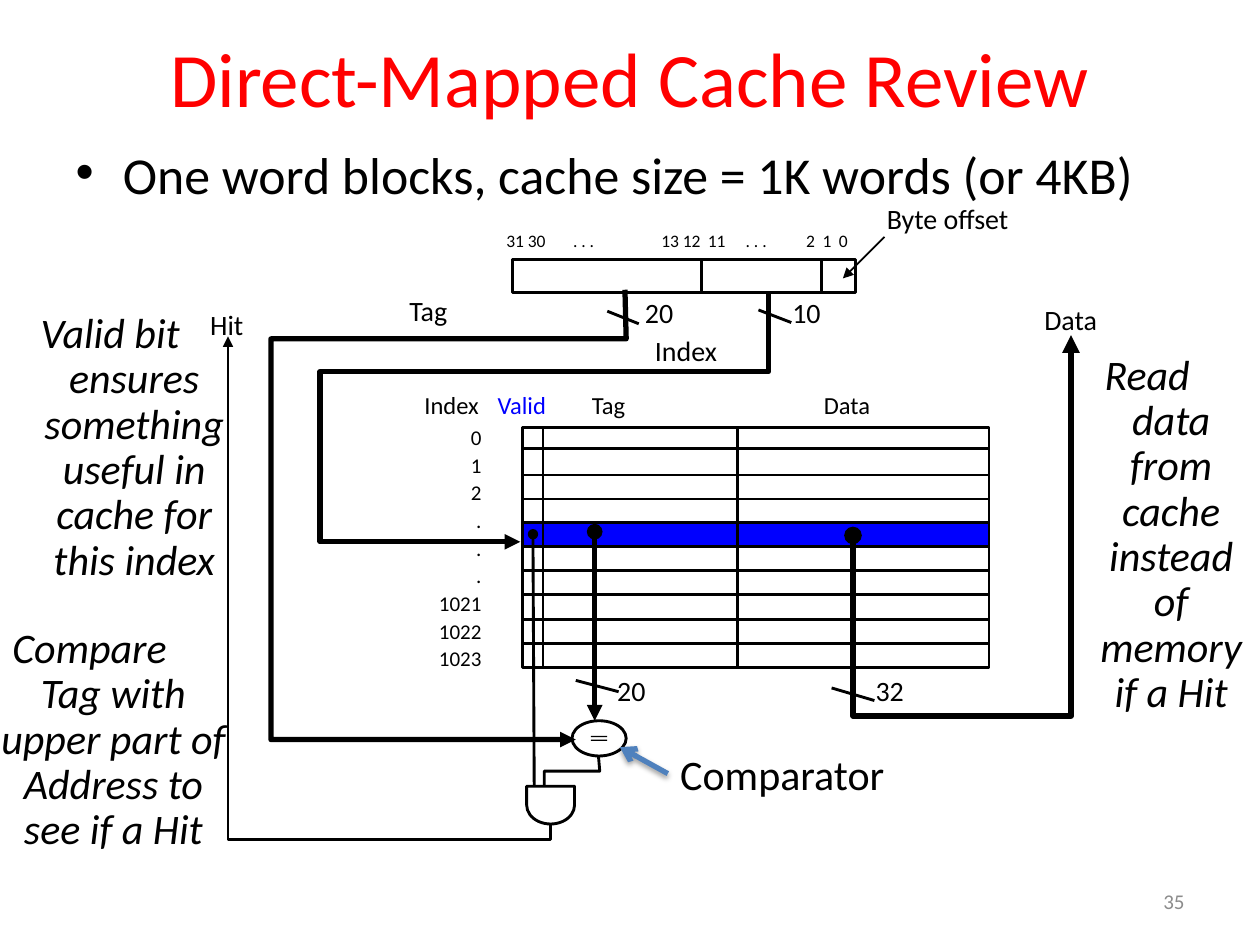
from lxml import etree
from pptx import Presentation
from pptx import util as u
from pptx.dml.color import RGBColor
from pptx.enum import shapes, text
from pptx.oxml.ns import qn

COLORS = {"ink": "000000", "title": "FF0000", "hit_row": "0000FF",
          "pointer": "4F81BD", "number": "8C8C8C"}
THIN, BUS = 1.63, 3

# Content; places are in inches and become Cm in size()
TITLE = "Direct-Mapped Cache Review"
SUMMARY = "One word blocks, cache size = 1K words (or 4KB)"
LABELS = [  # wording, left, top, width, height, points, colour
    ("20", 5.02, 2.3, 0.45, 0.37, 16, "ink"),
    ("Tag", 3.15, 2.28, 0.58, 0.37, 16, "ink"),
    ("10", 6.19, 2.3, 0.45, 0.37, 16, "ink"),
    ("Index", 5.1, 2.6, 0.74, 0.37, 16, "ink"),
    ("Index", 3.27, 3.05, 0.7, 0.33, 14, "ink"),
    ("Valid", 3.85, 3.05, 0.59, 0.33, 14, "hit_row"),
    ("Tag", 4.6, 3.05, 0.53, 0.33, 14, "ink"),
    ("Data", 6.44, 3.05, 0.61, 0.33, 14, "ink"),
    ("Byte offset", 6.94, 1.55, 1.25, 0.37, 16, "ink"),
    ("20", 4.8, 5.3, 0.45, 0.37, 16, "ink"),
    ("32", 6.85, 5.3, 0.45, 0.37, 16, "ink"),
    ("Data", 8.19, 2.35, 0.67, 0.37, 16, "ink"),
    ("Hit", 1.57, 2.39, 0.47, 0.37, 16, "ink"),
]
NOTES = [  # wording, left, top, width, height
    ("Valid bit ensures something useful in cache for this index",
     -0.21, 2.43, 2.17, 0.5),
    ("Compare\vTag with upper part of Address to see if a Hit",
     -0.5, 4.93, 2.42, 2.24),
    ("Read\vdata from cache instead of memory if a Hit",
     8.21, 2.76, 1.79, 0.5),
]
ROW_NAMES = ["0", "1", "2", ".", ".", ".", "1021", "1022", "1023"]
BIT_NAMES = ["31 30", ". . .", "13 12", "11", ". . .", "2", "1", "0"]
BIT_TABS = [0.53, 1.23, 1.6, 1.9, 2.38, 2.51, 2.64]

# Cache array and address register
CACHE_LEFT, CACHE_RIGHT, CACHE_TOP, CACHE_BOTTOM = 4.15, 7.85, 3.39, 5.3
ROW_LINES = [3.56, 3.77, 3.96, 4.34, 4.53, 4.72, 4.92, 5.11]
COLUMN_LINES = [4.31, 5.85]
HIT_TOP, HIT_HEIGHT = 4.15, 0.19
REGISTER_TOP, REGISTER_BOTTOM = 2.06, 2.32
FIELD_LINES = [5.57, 6.52]

BUS_SLASHES = [((4.82, 2.47), (5.07, 2.57)), ((6.02, 2.46), (6.28, 2.56)),
               ((4.57, 5.4), (4.91, 5.49)), ((6.6, 5.46), (6.94, 5.56))]
WIRES = [  # corners, width, head, tail
    ([(4.96, 2.3), (4.97, 2.69), (2.15, 2.69), (2.15, 5.87), (4.57, 5.87)],
     BUS, None, "triangle"),
    ([(6.1, 2.32), (6.1, 2.95), (2.54, 2.95), (2.54, 4.3), (4.13, 4.3)],
     BUS, None, "triangle"),
    ([(7.02, 1.88), (6.69, 2.21)], 1, None, "triangle"),
    ([(4.72, 4.22), (4.72, 5.72)], BUS, "oval", "triangle"),
    ([(6.77, 4.25), (6.77, 5.68), (8.5, 5.68), (8.5, 2.66)],
     3.38, "oval", "triangle"),
    ([(4.23, 4.24), (4.24, 6.24)], THIN, "oval", None),
    ([(4.75, 6), (4.76, 6.12), (4.32, 6.12), (4.32, 6.24)], THIN, None, None),
    ([(4.37, 6.54), (4.37, 6.66), (1.81, 6.66), (1.81, 2.67)],
     THIN, None, "triangle"),
]


def size(inches):
    return u.Cm(inches * 2.54)


def sizes(*inches):
    return [size(value) for value in inches]


def color(name):
    return RGBColor.from_string(COLORS[name])


def set_font(paragraph, points, name="ink", italic=None):
    font = paragraph.font
    font.name, font.size, font.italic = "Calibri", u.Pt(points), italic
    font.color.rgb = color(name)


def write(slide, words, place, points, name="ink", wrap=False, italic=None):
    box = slide.shapes.add_textbox(*sizes(*place))
    frame = box.text_frame
    frame.text = words
    frame.word_wrap = wrap
    if not wrap:
        frame.auto_size = text.MSO_AUTO_SIZE.SHAPE_TO_FIT_TEXT
    for paragraph in frame.paragraphs:
        set_font(paragraph, points, name, italic)
    return box


def outline(shape, width, head=None, tail=None, name="ink"):
    shape.line.color.rgb = color(name)
    shape.line.width = u.Pt(width)
    ln = shape.element.spPr.find(qn("a:ln"))
    for tag, kind in (("a:headEnd", head), ("a:tailEnd", tail)):
        if kind:
            etree.SubElement(ln, qn(tag), type=kind)


def draw(slide, preset, place, fill=None, width=THIN):
    shape = slide.shapes.add_shape(preset, *sizes(*place))
    shape.shadow.inherit = False
    if fill:
        shape.fill.solid()
        shape.fill.fore_color.rgb = color(fill)
    else:
        shape.fill.background()
    if width:
        outline(shape, width)
    else:
        shape.line.fill.background()
    return shape


def wire(slide, corners, width=THIN, head=None, tail=None, name="ink"):
    points = [sizes(*corner) for corner in corners]
    if len(points) == 2:
        path = slide.shapes.add_connector(
            shapes.MSO_CONNECTOR.STRAIGHT, *points[0], *points[1])
        outline(path, width, head, tail, name)
        etree.SubElement(path.element.spPr, qn("a:effectLst"))
    else:
        builder = slide.shapes.build_freeform(*points[0])
        builder.add_line_segments(points[1:], close=False)
        path = builder.convert_to_shape()
        path.shadow.inherit = False
        path.fill.background()
        outline(path, width, head, tail, name)
    return path


def add_headings(slide):
    title, body = slide.shapes.title, slide.placeholders[1]
    for holder, words, place, points, name in (
            (title, TITLE, (0.5, 0.17, 9, 0.87), 44, "title"),
            (body, SUMMARY, (0.5, 1.26, 8.83, 0.74), 29.6, "ink")):
        holder.left, holder.top, holder.width, holder.height = sizes(*place)
        holder.text_frame.text = words
        holder.text_frame.auto_size = text.MSO_AUTO_SIZE.NONE
        set_font(holder.text_frame.paragraphs[0], points, name)
    body.text_frame.paragraphs[0].line_spacing = 0.6


def add_cache(slide):
    rectangle = shapes.MSO_SHAPE.RECTANGLE
    width = CACHE_RIGHT - CACHE_LEFT
    draw(slide, rectangle, (CACHE_LEFT, CACHE_TOP, width, CACHE_BOTTOM - CACHE_TOP))
    draw(slide, rectangle, (CACHE_LEFT, HIT_TOP, width, HIT_HEIGHT), "hit_row")
    for y in ROW_LINES:
        wire(slide, [(CACHE_LEFT, y), (CACHE_RIGHT, y)])
    for x in COLUMN_LINES:
        wire(slide, [(x, CACHE_TOP), (x, CACHE_BOTTOM)])
    rows = write(slide, "\n".join(ROW_NAMES), (3.35, 3.3, 0.57, 2.09), 12)
    for paragraph in rows.text_frame.paragraphs:
        paragraph.alignment = text.PP_ALIGN.RIGHT
        paragraph.line_spacing = 1.1


def add_register(slide):
    draw(slide, shapes.MSO_SHAPE.RECTANGLE,
         (4.07, REGISTER_TOP, 2.72, REGISTER_BOTTOM - REGISTER_TOP))
    for x in FIELD_LINES:
        wire(slide, [(x, REGISTER_TOP), (x, REGISTER_BOTTOM)])
    bits = write(slide, "\t".join(BIT_NAMES), (3.92, 1.78, 3.1, 0.27), 10, wrap=True)
    properties = bits.text_frame.paragraphs[0].font._element.getparent()
    stops = etree.Element(qn("a:tabLst"))
    for stop in BIT_TABS:
        etree.SubElement(stops, qn("a:tab"), pos=str(size(stop)), algn="l")
    properties.insert(0, stops)


def add_logic(slide):
    # Comparator with its equals sign, then the AND gate
    draw(slide, shapes.MSO_SHAPE.OVAL, (4.54, 5.72, 0.43, 0.28))
    for y in (5.84, 5.87):
        draw(slide, shapes.MSO_SHAPE.RECTANGLE, (4.69, y, 0.13, 0.01), "ink", None)
    gate = draw(slide, shapes.MSO_SHAPE.FLOWCHART_DELAY, (4.22, 6.2, 0.3, 0.38))
    gate.rotation = 90

    name = write(slide, "Comparator", (5.3, 5.89, 1.84, 0.5), 24)
    pointer = wire(slide, [(5.3, 6.14), (4.92, 5.93)], 3, tail="arrow", name="pointer")
    pointer.begin_connect(name, 1)
    effects = pointer.element.spPr.find(qn("a:effectLst"))
    shadow = etree.SubElement(effects, qn("a:outerShdw"), blurRad=str(u.Pt(3.1)),
                              dist=str(u.Pt(1.6)), dir="5400000", rotWithShape="0")
    black = etree.SubElement(shadow, qn("a:srgbClr"), val=COLORS["ink"])
    etree.SubElement(black, qn("a:alpha"), val="38000")


def add_notes(slide):
    for words, *place in NOTES:
        note = write(slide, words, place, 24, wrap=True, italic=True)
        paragraph = note.text_frame.paragraphs[0]
        paragraph.alignment = text.PP_ALIGN.CENTER
        paragraph.line_spacing = 0.9
        properties = paragraph.font._element.getparent()
        properties.set("marL", str(size(0.38)))
        properties.set("indent", str(size(-0.38)))
    number = write(slide, "35", (7.17, 6.95, 2.33, 0.4), 12, "number", wrap=True)
    number.text_frame.vertical_anchor = text.MSO_ANCHOR.MIDDLE
    number.text_frame.paragraphs[0].alignment = text.PP_ALIGN.RIGHT


def main():
    deck = Presentation()
    deck.slide_width, deck.slide_height = sizes(10, 7.5)
    slide = deck.slides.add_slide(deck.slide_layouts[1])
    add_headings(slide)
    add_cache(slide)
    add_register(slide)
    add_logic(slide)
    for slash in BUS_SLASHES:
        wire(slide, slash)
    for corners, width, head, tail in WIRES:
        wire(slide, corners, width, head, tail)
    for words, *place, points, name in LABELS:
        write(slide, words, place, points, name)
    add_notes(slide)
    deck.save("out.pptx")


if __name__ == "__main__":
    main()
